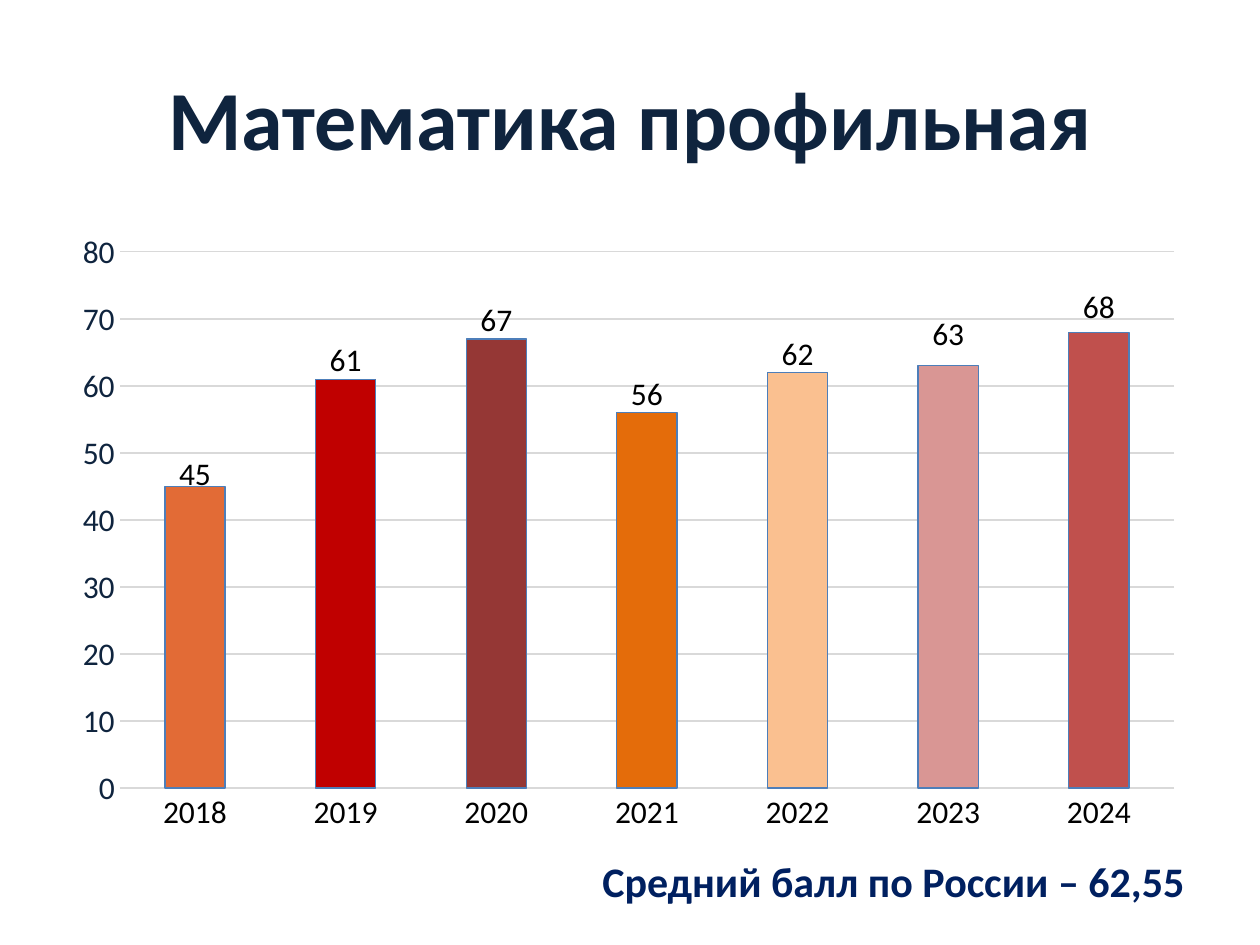
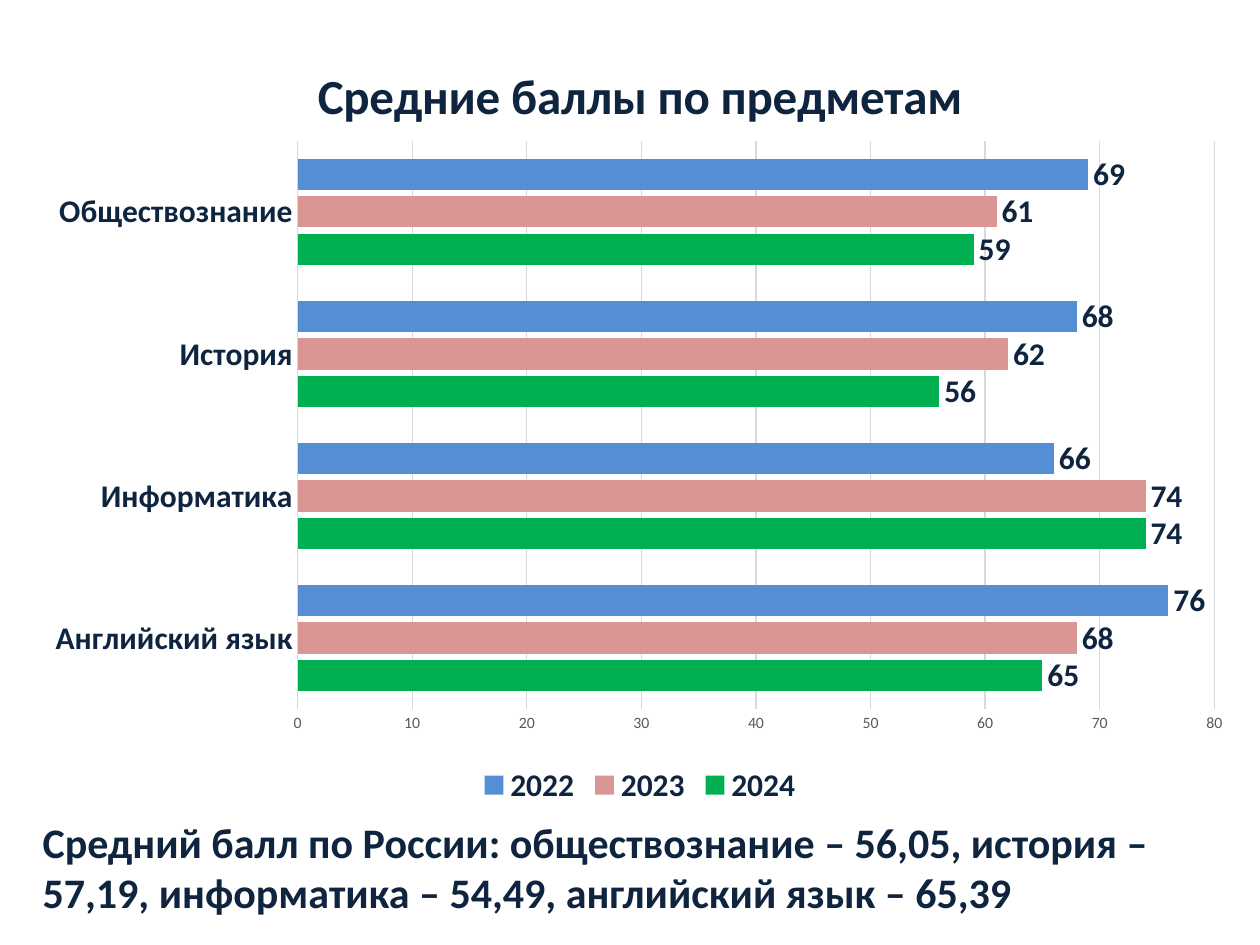
from lxml import etree
from pptx import Presentation
from pptx import util as u
from pptx.chart.data import CategoryChartData
from pptx.dml.color import RGBColor
from pptx.enum import chart as ch
from pptx.enum import text
from pptx.oxml.ns import qn

NAVY = RGBColor(0x0F, 0x24, 0x3E)
BLUE_NAVY = RGBColor(0x00, 0x20, 0x60)
BLACK = RGBColor(0, 0, 0)
GREY = RGBColor(0x59, 0x59, 0x59)
GRID = RGBColor(0xD9, 0xD9, 0xD9)
OUTLINE = RGBColor(0x4D, 0x7E, 0xB9)
PINK = RGBColor(0xD9, 0x96, 0x94)
GREEN = RGBColor(0x00, 0xB0, 0x50)
BLUE = RGBColor(0x55, 0x8E, 0xD5)
FONT = "Calibri"

MATH_TITLE = "Математика профильная"
MATH_NOTE = "Средний балл по России – 62,55"
MATH_SCORES = [
    ("2018", 45, RGBColor(0xE2, 0x6B, 0x36), 0.02),
    ("2019", 61, RGBColor(0xC0, 0x00, 0x00), 0.03),
    ("2020", 67, RGBColor(0x95, 0x37, 0x35), 0.03),
    ("2021", 56, RGBColor(0xE4, 0x6C, 0x0A), 0.03),
    ("2022", 62, RGBColor(0xFA, 0xC0, 0x90), 0.03),
    ("2023", 63, PINK, 0.05),
    ("2024", 68, RGBColor(0xC0, 0x50, 0x4D), 0.04),
]
SUBJECT_TITLE = "Средние баллы по предметам"
SUBJECT_NOTE = ("Средний балл по России: обществознание – 56,05, история – 57,19, "
                "информатика – 54,49, английский язык – 65,39")
SUBJECTS = ["Английский язык", "Информатика", "История", "Обществознание"]
SUBJECT_SCORES = [
    ("2024", [65, 74, 56, 59], GREEN),
    ("2023", [68, 74, 62, 61], PINK),
    ("2022", [76, 66, 68, 69], BLUE),
]
SCORE_MAX = 80
MATH_PLOT = dict(x=0.05, y=0.05, w=0.93, h=0.86)
SUBJECT_PLOT = dict(x=0.22, y=0.14, w=0.75, h=0.73)


def style_font(font, size, color, bold=False):
    font.name = FONT
    font.size = u.Pt(size)
    font.bold = bold
    font.color.rgb = color


def add_text(slide, content, box, size=24, color=NAVY, align=text.PP_ALIGN.LEFT,
             anchor=text.MSO_ANCHOR.TOP):
    frame = slide.shapes.add_textbox(*map(u.Cm, box)).text_frame
    frame.word_wrap = True
    frame.vertical_anchor = anchor
    paragraph = frame.paragraphs[0]
    paragraph.alignment = align
    run = paragraph.add_run()
    run.text = content
    style_font(run.font, size, color, True)


def make_layout(inner=False, **fractions):
    layout = etree.Element(qn("c:layout"))
    manual = etree.SubElement(layout, qn("c:manualLayout"))
    if inner:
        etree.SubElement(manual, qn("c:layoutTarget"), val="inner")
        for side in "xy":
            etree.SubElement(manual, qn(f"c:{side}Mode"), val="edge")
    for side, fraction in fractions.items():
        etree.SubElement(manual, qn(f"c:{side}"), val=f"{fraction:.3f}")
    return layout


def add_score_chart(slide, kind, box, categories, series, plot_box, gap, overlap):
    data = CategoryChartData()
    data.categories = categories
    for name, values in series:
        data.add_series(name, values)
    chart = slide.shapes.add_chart(kind, *map(u.Cm, box), data).chart
    style_font(chart.font, 10, BLACK)
    chart.has_title = False
    chart.has_legend = False
    plot = chart.plots[0]
    plot.vary_by_categories = False
    plot.gap_width = gap
    plot.overlap = overlap
    for axis in (chart.category_axis, chart.value_axis):
        axis.major_tick_mark = axis.minor_tick_mark = ch.XL_TICK_MARK.NONE
    chart.category_axis.format.line.color.rgb = GRID
    chart.category_axis.format.line.width = u.Pt(0.75)
    scale = chart.value_axis
    scale.minimum_scale, scale.maximum_scale, scale.major_unit = 0, SCORE_MAX, 10
    scale.format.line.fill.background()
    scale.major_gridlines.format.line.color.rgb = GRID
    scale.major_gridlines.format.line.width = u.Pt(0.75)
    plot_area = chart.element.find(".//" + qn("c:plotArea"))
    for old_layout in plot_area.findall(qn("c:layout")):
        plot_area.remove(old_layout)
    plot_area.insert(0, make_layout(inner=True, **plot_box))
    return chart


def lift_labels(chart, scores, lifts):
    labels = list(chart.element.iter(qn("c:dLbl")))
    for label, score, lift in zip(labels, scores, lifts):
        half_bar = score / SCORE_MAX * MATH_PLOT["h"] / 2
        label.insert(1, make_layout(x=0, y=-half_bar - lift))
    for leader_lines in chart.element.iter(qn("c:showLeaderLines")):
        leader_lines.set("val", "0")


def build_math_slide(slide):
    add_text(slide, MATH_TITLE, (1.27, 0.76, 22.86, 3.18), size=48,
             align=text.PP_ALIGN.CENTER, anchor=text.MSO_ANCHOR.MIDDLE)
    years, scores, colors, lifts = zip(*MATH_SCORES)
    chart = add_score_chart(slide, ch.XL_CHART_TYPE.COLUMN_STACKED,
                            (1.27, 4.45, 22.86, 12.57), years,
                            [("Series 1", scores)], MATH_PLOT, 150, 100)
    style_font(chart.category_axis.tick_labels.font, 18, BLACK)
    style_font(chart.value_axis.tick_labels.font, 18, NAVY)
    series = chart.plots[0].series[0]
    for index, color in enumerate(colors):
        point = series.points[index]
        point.format.fill.solid()
        point.format.fill.fore_color.rgb = color
        point.format.line.color.rgb = OUTLINE
        point.format.line.width = u.Pt(0.75)
        style_font(point.data_label.font, 18, BLACK)
        point.data_label.position = ch.XL_LABEL_POSITION.CENTER
    lift_labels(chart, scores, lifts)
    add_text(slide, MATH_NOTE, (10.11, 17.12, 14.02, 1.27), color=BLUE_NAVY,
             align=text.PP_ALIGN.RIGHT)


def build_subject_slide(slide):
    chart = add_score_chart(slide, ch.XL_CHART_TYPE.BAR_CLUSTERED,
                            (0.58, 0.64, 24.64, 15.7), SUBJECTS,
                            [entry[:2] for entry in SUBJECT_SCORES],
                            SUBJECT_PLOT, 115, -20)
    title = chart.chart_title.text_frame
    title.text = SUBJECT_TITLE
    style_font(title.paragraphs[0].runs[0].font, 28, NAVY, True)
    chart.chart_title.include_in_layout = False
    style_font(chart.category_axis.tick_labels.font, 18, NAVY, True)
    style_font(chart.value_axis.tick_labels.font, 9, GREY)
    chart.has_legend = True
    chart.legend.position = ch.XL_LEGEND_POSITION.BOTTOM
    chart.legend.include_in_layout = False
    style_font(chart.legend.font, 18, NAVY, True)
    for series, (_, _, color) in zip(chart.plots[0].series, SUBJECT_SCORES):
        series.format.fill.solid()
        series.format.fill.fore_color.rgb = color
        labels = series.data_labels
        labels.show_value = True
        labels.position = ch.XL_LABEL_POSITION.OUTSIDE_END
        style_font(labels.font, 18, NAVY, True)
    add_text(slide, SUBJECT_NOTE, (0.61, 16.33, 24.79, 2.31))


def main():
    presentation = Presentation()
    presentation.slide_width, presentation.slide_height = u.Cm(25.4), u.Cm(19.05)
    for build in (build_math_slide, build_subject_slide):
        build(presentation.slides.add_slide(presentation.slide_layouts[6]))
    presentation.save("out.pptx")


if __name__ == "__main__":
    main()
